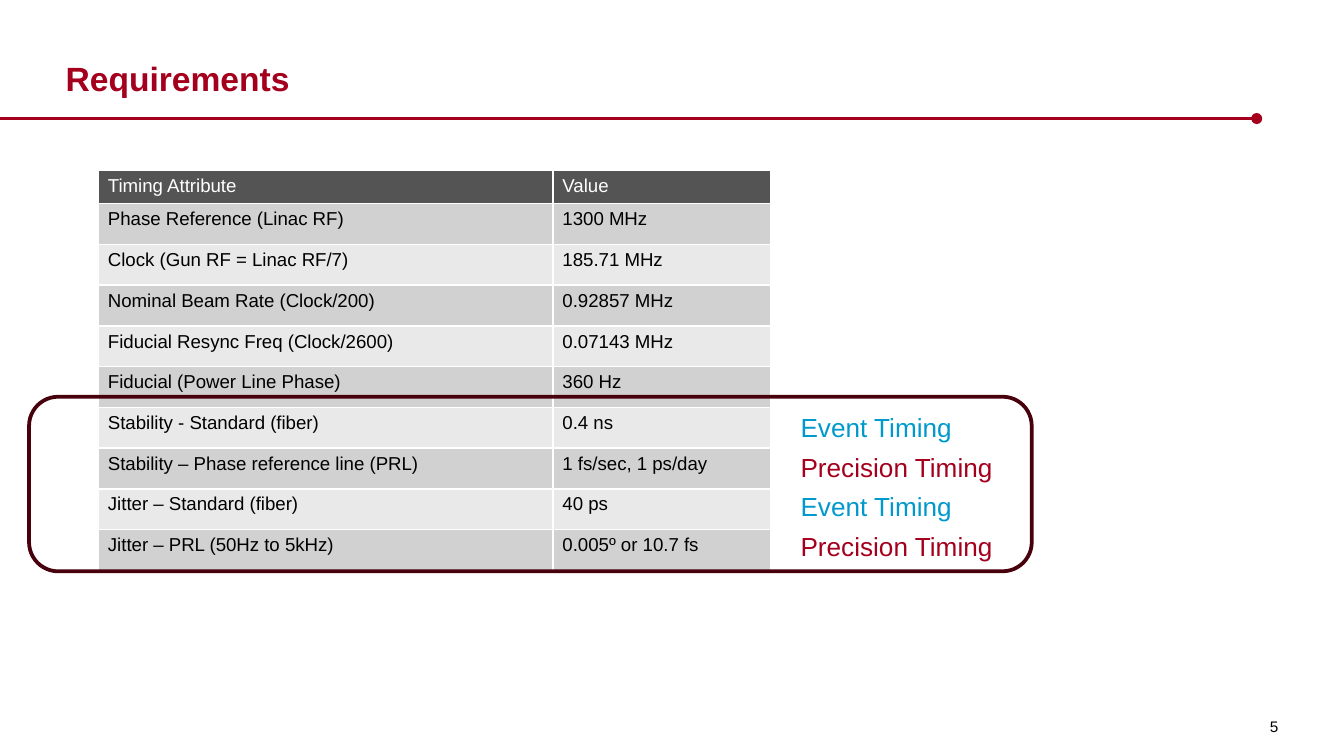
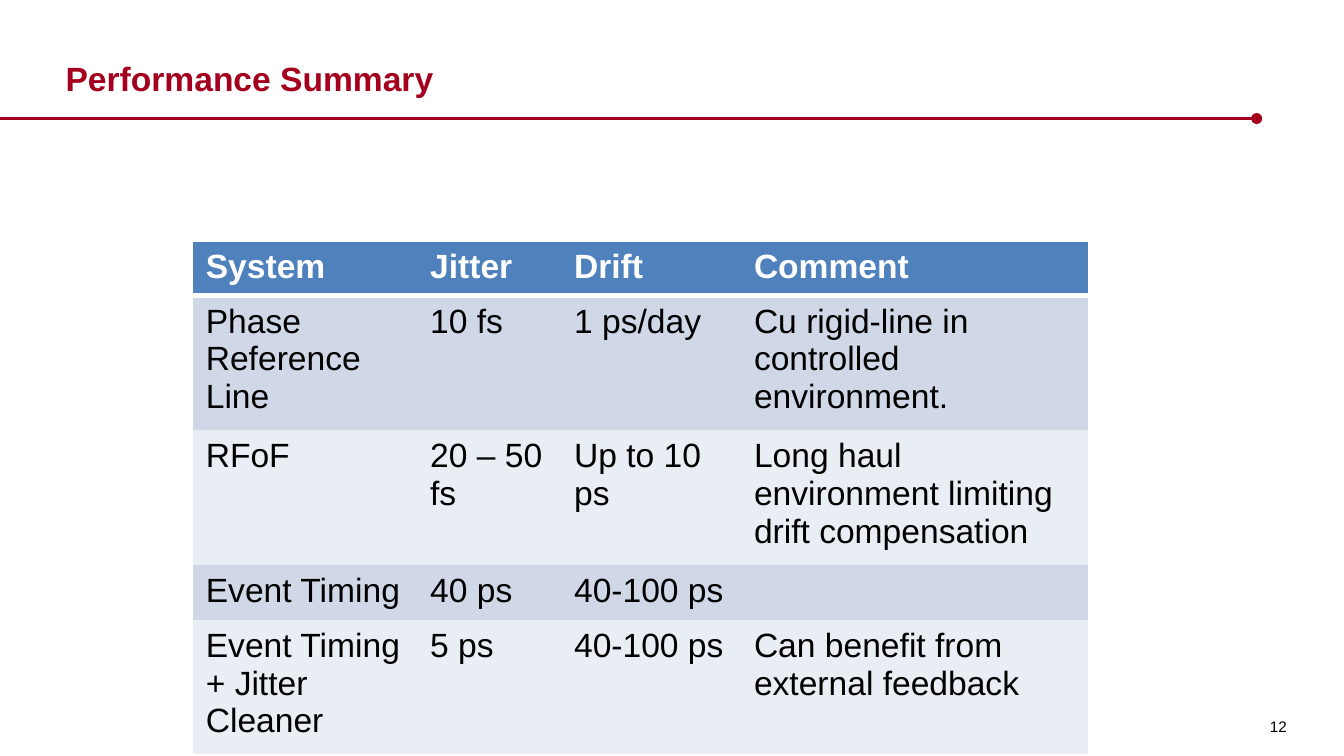
from collections import namedtuple

from lxml.etree import SubElement
from pptx import Presentation
from pptx.dml.color import RGBColor
from pptx.enum.shapes import MSO_CONNECTOR, MSO_SHAPE
from pptx.enum.text import MSO_ANCHOR, MSO_AUTO_SIZE, PP_ALIGN
from pptx.oxml.ns import qn
from pptx.util import Cm, Pt

COLORS = {
    "red": "A4001D",
    "maroon": "48000D",
    "cyan": "0099CC",
    "black": "000000",
    "white": "FFFFFF",
    "charcoal": "545455",
    "gray": "D1D1D1",
    "pale_gray": "E9E9E9",
    "blue": "4F81BD",
    "pale_blue": "D0D8E8",
    "ice": "E9EDF4",
}
FONT = "Arial"

Box = namedtuple("Box", "left top width height")
TableStyle = namedtuple("TableStyle", "size bold_header header bands margins borders")

TITLE_BOX = Box(1.24, 0.28, 22.5, 1.57)
RULE_BOX = Box(0, 2.24, 23.75, 0)
NUMBER_BOX = Box(23.8, 13.16, 0.89, 1.12)

REQUIREMENTS = [
    ("Timing Attribute", "Value"),
    ("Phase Reference (Linac RF)", "1300 MHz"),
    ("Clock (Gun RF = Linac RF/7)", "185.71 MHz"),
    ("Nominal Beam Rate (Clock/200)", "0.92857 MHz"),
    ("Fiducial Resync Freq (Clock/2600)", "0.07143 MHz"),
    ("Fiducial (Power Line Phase)", "360 Hz"),
    ("Stability - Standard (fiber)", "0.4 ns"),
    ("Stability – Phase reference line (PRL)", "1 fs/sec, 1 ps/day"),
    ("Jitter – Standard (fiber)", "40 ps"),
    ("Jitter – PRL (50Hz to 5kHz)", "0.005º or 10.7 fs"),
]
PERFORMANCE = [
    ("System", "Jitter", "Drift", "Comment"),
    ("Phase Reference Line", "10 fs", "1 ps/day", "Cu rigid-line in controlled environment."),
    ("RFoF", "20 – 50 fs", "Up to 10 ps", "Long haul environment limiting drift compensation"),
    ("Event Timing", "40 ps", "40-100 ps", ""),
    ("Event Timing + Jitter Cleaner", "5 ps", "40-100 ps", "Can benefit from external feedback"),
]


def rgb(name):
    return RGBColor.from_string(COLORS[name])


def cm(box):
    return [Cm(length) for length in box]


def add_span(para, text, size, color, bold=False):
    span = para.add_run()
    span.text = text
    span.font.name = FONT
    span.font.size = Pt(size)
    span.font.bold = bold
    span.font.color.rgb = rgb(color)


def set_margins(target, left, top, right, bottom):
    target.margin_left, target.margin_top = Cm(left), Cm(top)
    target.margin_right, target.margin_bottom = Cm(right), Cm(bottom)


def grid_borders(row, col, rows, cols):
    return dict.fromkeys("LRTB", 1)


def frame_borders(row, col, rows, cols):
    return {
        "L": int(col == 0),
        "R": int(col == cols - 1),
        "T": {0: 1, 1: 3}.get(row, 0),
        "B": 3 if row == 0 else int(row == rows - 1),
    }


GRAY_GRID = TableStyle(10, False, "charcoal", ("gray", "pale_gray"),
                       (0.18, 0.1, 0.18, 0.1), grid_borders)
BLUE_BANDS = TableStyle(18, True, "blue", ("pale_blue", "ice"),
                        (0.25, 0.13, 0.25, 0.13), frame_borders)


def set_borders(cell, widths):
    props = cell._tc.get_or_add_tcPr()
    for side, width in widths.items():
        line = SubElement(props, qn(f"a:ln{side}"), w=str(Pt(width)))
        if width:
            fill = SubElement(line, qn("a:solidFill"))
            SubElement(fill, qn("a:srgbClr"), val=COLORS["white"])
        else:
            SubElement(line, qn("a:noFill"))


def add_data_table(page, left, top, widths, heights, data, style):
    box = Box(left, top, sum(widths), sum(heights))
    table = page.shapes.add_table(len(data), len(widths), *cm(box)).table
    table.first_row = table.horz_banding = False
    for column, width in zip(table.columns, widths):
        column.width = Cm(width)
    for row, (texts, height) in enumerate(zip(data, heights)):
        table.rows[row].height = Cm(height)
        is_header = row == 0
        for col, text in enumerate(texts):
            cell = table.cell(row, col)
            set_margins(cell, *style.margins)
            set_borders(cell, style.borders(row, col, len(data), len(widths)))
            cell.fill.solid()
            cell.fill.fore_color.rgb = rgb(style.header if is_header else style.bands[(row - 1) % 2])
            if text:
                add_span(cell.text_frame.paragraphs[0], text, style.size,
                         "white" if is_header else "black", is_header and style.bold_header)


def add_title(page, text):
    title = page.shapes.title
    title.left, title.top, title.width, title.height = cm(TITLE_BOX)
    frame = title.text_frame
    set_margins(frame, 0, 0, 0, 0)
    frame.vertical_anchor = MSO_ANCHOR.BOTTOM
    frame.auto_size = MSO_AUTO_SIZE.NONE
    para = frame.paragraphs[0]
    para.alignment = PP_ALIGN.LEFT
    add_span(para, text, 18, "red", True)


def add_title_rule(page):
    left, top, width, height = cm(RULE_BOX)
    rule = page.shapes.add_connector(MSO_CONNECTOR.STRAIGHT, left, top, left + width, top + height)
    rule.line.color.rgb = rgb("red")
    rule.line.width = Pt(1.75)
    SubElement(rule.line._get_or_add_ln(), qn("a:tailEnd"), type="oval")
    SubElement(rule._element.spPr, qn("a:effectLst"))


def add_page_number(page, number):
    frame = page.shapes.add_textbox(*cm(NUMBER_BOX)).text_frame
    frame.word_wrap = True
    frame.vertical_anchor = MSO_ANCHOR.MIDDLE
    set_margins(frame, 0.2, 0.15, 0.2, 0.13)
    add_span(frame.paragraphs[0], str(number), 8.2, "black")


def add_page(deck, title, number):
    page = deck.slides.add_slide(deck.slide_layouts[5])
    add_title_rule(page)
    add_page_number(page, number)
    add_title(page, title)
    return page


def add_timing_group(page, box):
    kinds = [("Event Timing", "cyan", 3.38), ("Precision Timing", "red", 4.17)] * 2
    for index, (text, color, width) in enumerate(kinds):
        label = Box(box.left + 14.33, box.top + 0.15 + 0.75 * index, width, 0.86)
        frame = page.shapes.add_textbox(*cm(label)).text_frame
        frame.word_wrap = False
        frame.auto_size = MSO_AUTO_SIZE.SHAPE_TO_FIT_TEXT
        add_span(frame.paragraphs[0], text, 14, color)
    outline = page.shapes.add_shape(MSO_SHAPE.ROUNDED_RECTANGLE, *cm(box))
    outline.shadow.inherit = False
    outline.fill.background()
    outline.line.color.rgb = rgb("maroon")
    outline.line.width = Pt(2)


def add_requirements(deck):
    page = add_page(deck, "Requirements", 5)
    heights = [0.63] + [0.77] * (len(REQUIREMENTS) - 1)
    add_data_table(page, 1.86, 3.22, [8.59, 4.11], heights, REQUIREMENTS, GRAY_GRID)
    add_timing_group(page, Box(0.55, 7.5, 18.95, 3.3))


def add_performance(deck):
    page = add_page(deck, "Performance Summary", 12)
    heights = [1.04] * len(PERFORMANCE)
    add_data_table(page, 3.64, 4.55, [4.24, 2.72, 3.4, 6.58], heights, PERFORMANCE, BLUE_BANDS)


def main():
    deck = Presentation()
    deck.slide_width, deck.slide_height = Cm(25.4), Cm(14.29)
    add_requirements(deck)
    add_performance(deck)
    deck.save("out.pptx")


if __name__ == "__main__":
    main()
